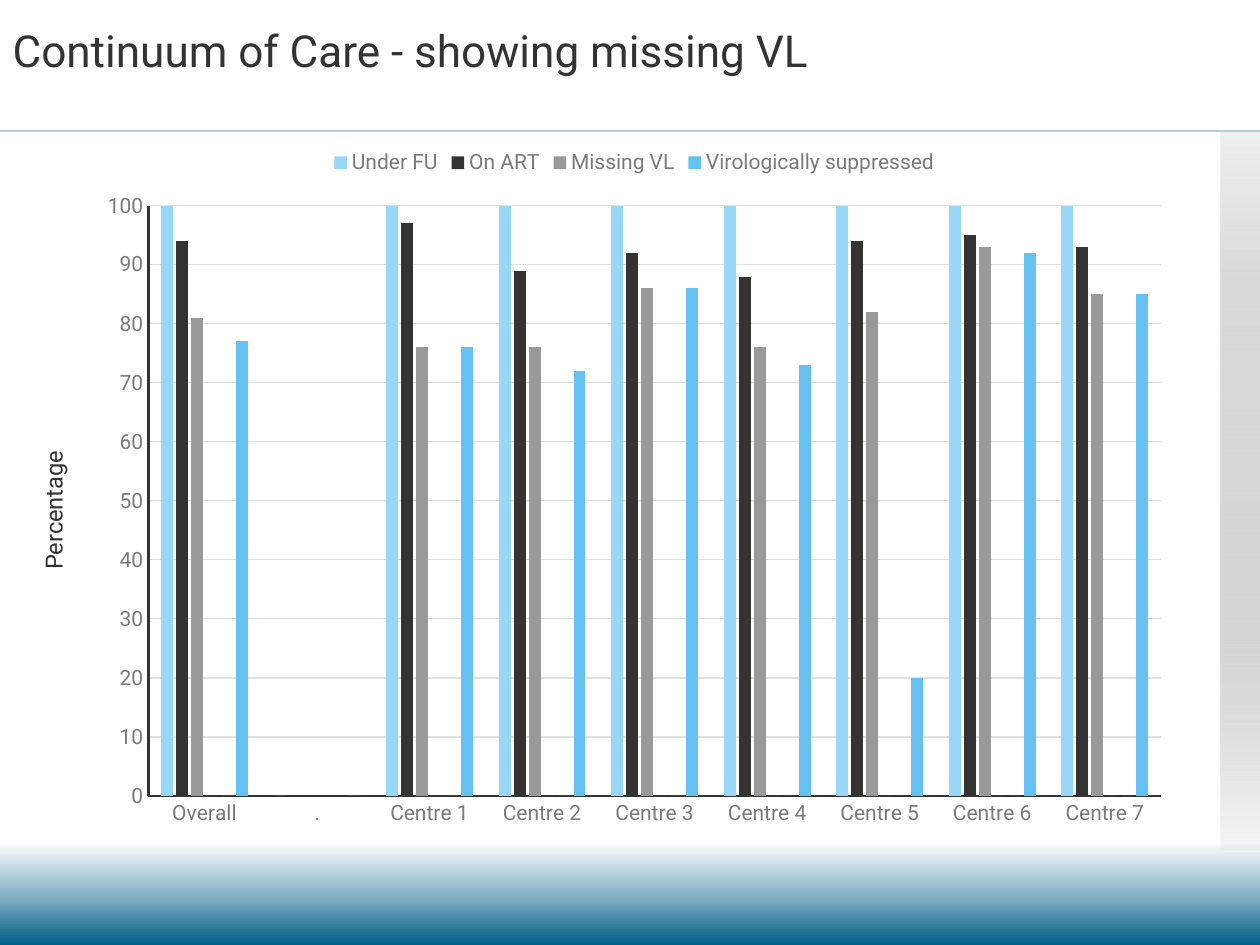
import copy

import pptx
import pptx.chart.data
import pptx.dml.color
import pptx.enum.chart
import pptx.enum.shapes
import pptx.enum.text
import pptx.oxml
import pptx.oxml.ns
import pptx.util
from pptx.util import Inches

COLORS = {
    "white": "FFFFFF", "mist": "80AFC3", "petrol": "005F86", "ink": "333333",
    "label": "7A7A7A", "grid": "E0E0E0", "light_blue": "99D7F6",
    "grey": "999999", "dark_grey": "666666", "bright_blue": "19A5EA", "blue": "65C2F0",
    "band_top": "D9D9D9", "band_mid": "D5D5D5", "band_end": "BFBFBF",
}
FONT = "Roboto"
NS = pptx.oxml.ns.nsdecls("a", "c")
qn = pptx.oxml.ns.qn


def style_font(font, size, color):
    font.name = FONT
    font.size = pptx.util.Pt(size)
    font.bold = False
    font.color.rgb = pptx.dml.color.RGBColor.from_string(COLORS[color])


def fill_downward(fill, element, stops):
    fill.gradient()
    fill.gradient_angle = 270
    stop_list = element.find(".//" + qn("a:gsLst"))
    for old_stop in list(stop_list):
        stop_list.remove(old_stop)
    for position, color, opacity in stops:
        stop_list.append(pptx.oxml.parse_xml(
            f'<a:gs {NS} pos="{position * 1000}"><a:srgbClr val="{COLORS[color]}">'
            f'<a:alpha val="{opacity * 1000}"/></a:srgbClr></a:gs>'))


deck = pptx.Presentation()
deck.slide_width = Inches(10)
deck.slide_height = Inches(7.5)
slide = deck.slides.add_slide(deck.slide_layouts[5])
fill_downward(slide.background.fill, slide.element,
              [(89, "white", 100), (95, "mist", 100), (100, "petrol", 100)])

header_rule = slide.shapes.add_connector(
    pptx.enum.shapes.MSO_CONNECTOR.STRAIGHT, 0, Inches(1.04), Inches(10), Inches(1.04))
header_rule.line.width = pptx.util.Pt(1)
header_rule.line.color.rgb = pptx.dml.color.RGBColor.from_string(COLORS["petrol"])
rule_properties = header_rule.element.spPr
rule_properties.find(".//" + qn("a:srgbClr")).append(
    pptx.oxml.parse_xml(f'<a:alpha {NS} val="30000"/>'))
rule_properties.append(pptx.oxml.parse_xml(f"<a:effectLst {NS}/>"))

side_band = slide.shapes.add_shape(
    pptx.enum.shapes.MSO_SHAPE.RECTANGLE,
    Inches(9.69), Inches(1.05), Inches(0.31), Inches(5.69))
side_band.shadow.inherit = False
side_band.line.fill.background()
fill_downward(side_band.fill, side_band.element,
              [(0, "band_top", 40), (21, "band_top", 100),
               (70, "band_mid", 100), (100, "band_end", 13)])

title = slide.shapes.title
title.left, title.top, title.width, title.height = (
    Inches(0), Inches(0.2), Inches(7.5), Inches(0.78))
title.text_frame.text = "Continuum of Care - showing missing VL"
title.text_frame.vertical_anchor = pptx.enum.text.MSO_ANCHOR.TOP
title.text_frame.margin_top = Inches(0.03)
title.text_frame.auto_size = pptx.enum.text.MSO_AUTO_SIZE.NONE
heading = title.text_frame.paragraphs[0]
heading.alignment = pptx.enum.text.PP_ALIGN.LEFT
heading.line_spacing = 0.9
style_font(heading.runs[0].font, 25.2, "ink")

care_steps = [
    ("Under FU", "light_blue", [100, 0, 100, 100, 100, 100, 100, 100, 100]),
    ("On ART", "ink", [94, 0, 97, 89, 92, 88, 94, 95, 93]),
    ("Missing VL", "grey", [81, None, 76, 76, 86, 76, 82, 93, 85]),
    ("Series 4", "dark_grey", [0, None] + [0] * 7),
    ("Series 5", "bright_blue", [0, None] + [0] * 7),
    ("Virologically suppressed", "blue", [77, 0, 76, 72, 86, 73, 20, 92, 85]),
]
care_data = pptx.chart.data.CategoryChartData()
care_data.categories = ["Overall", "."] + [f"Centre {n}" for n in range(1, 8)]
for name, color, values in care_steps:
    care_data.add_series(name, values)
chart = slide.shapes.add_chart(
    pptx.enum.chart.XL_CHART_TYPE.COLUMN_CLUSTERED,
    Inches(0.68), Inches(1.08), Inches(8.71), Inches(5.59), care_data).chart
chart.has_title = False
style_font(chart.font, 10, "ink")

columns = chart.plots[0]
columns.vary_by_categories = False
columns.gap_width = 219
columns.overlap = -27
for series, (name, color, values) in zip(columns.series, care_steps):
    series.format.fill.solid()
    series.format.fill.fore_color.rgb = pptx.dml.color.RGBColor.from_string(COLORS[color])

for axis in (chart.category_axis, chart.value_axis):
    axis.major_tick_mark = pptx.enum.chart.XL_TICK_MARK.NONE
    axis.minor_tick_mark = pptx.enum.chart.XL_TICK_MARK.NONE
    axis.format.line.width = pptx.util.Pt(1.5)
    axis.format.line.color.rgb = pptx.dml.color.RGBColor.from_string(COLORS["ink"])
    style_font(axis.tick_labels.font, 12, "label")
percent_axis = chart.value_axis
percent_axis.minimum_scale = 0
percent_axis.maximum_scale = 100
percent_axis.major_unit = 10
grid_line = percent_axis.major_gridlines.format.line
grid_line.width = pptx.util.Pt(0.75)
grid_line.color.rgb = pptx.dml.color.RGBColor.from_string(COLORS["grid"])

chart.has_legend = True
legend = chart.legend
legend.position = pptx.enum.chart.XL_LEGEND_POSITION.TOP
legend.include_in_layout = False
style_font(legend.font, 12, "label")
legend_position = chart.element.find(".//" + qn("c:legendPos"))
for spacer in (4, 3):
    legend_position.addnext(pptx.oxml.parse_xml(
        f'<c:legendEntry {NS}><c:idx val="{spacer}"/><c:delete val="1"/></c:legendEntry>'))

plot_area = chart.element.find(".//" + qn("c:plotArea"))
left_columns = plot_area.find(qn("c:barChart"))
right_columns = copy.deepcopy(left_columns)
left_columns.addnext(right_columns)
for left_series in left_columns.findall(qn("c:ser"))[3:]:
    left_columns.remove(left_series)
for right_series in right_columns.findall(qn("c:ser"))[:3]:
    right_columns.remove(right_series)

left_axes = [plot_area.find(qn("c:valAx")), plot_area.find(qn("c:catAx"))]
right_axes = [copy.deepcopy(axis) for axis in left_axes]
right_ids = {axis.find(qn("c:axId")).get("val"): str(number)
             for number, axis in enumerate(left_axes, 5001)}
left_axes[0].addnext(right_axes[0])
right_axes[0].addnext(right_axes[1])
for part in [right_columns] + right_axes:
    for reference in part.findall(qn("c:axId")) + part.findall(qn("c:crossAx")):
        reference.set("val", right_ids[reference.get("val")])
for axis in right_axes:
    axis.find(qn("c:delete")).set("val", "1")
right_axes[0].remove(right_axes[0].find(qn("c:majorGridlines")))
right_axes[0].find(qn("c:axPos")).set("val", "r")
right_axes[0].find(qn("c:crosses")).set("val", "max")

old_layout = plot_area.find(qn("c:layout"))
if old_layout is not None:
    plot_area.remove(old_layout)
plot_area.insert(0, pptx.oxml.parse_xml(
    f'<c:layout {NS}><c:manualLayout><c:layoutTarget val="inner"/>'
    '<c:xMode val="edge"/><c:yMode val="edge"/><c:x val="0.057"/><c:y val="0.099"/>'
    '<c:w val="0.923"/><c:h val="0.838"/></c:manualLayout></c:layout>'))

axis_caption = slide.shapes.add_textbox(
    Inches(-0.23), Inches(3.8), Inches(1.31), Inches(0.33))
axis_caption.rotation = 270
axis_caption.text_frame.word_wrap = True
axis_caption.text_frame.auto_size = pptx.enum.text.MSO_AUTO_SIZE.SHAPE_TO_FIT_TEXT
axis_caption.text_frame.text = "Percentage"
style_font(axis_caption.text_frame.paragraphs[0].runs[0].font, 13.5, "ink")

deck.save("out.pptx")
